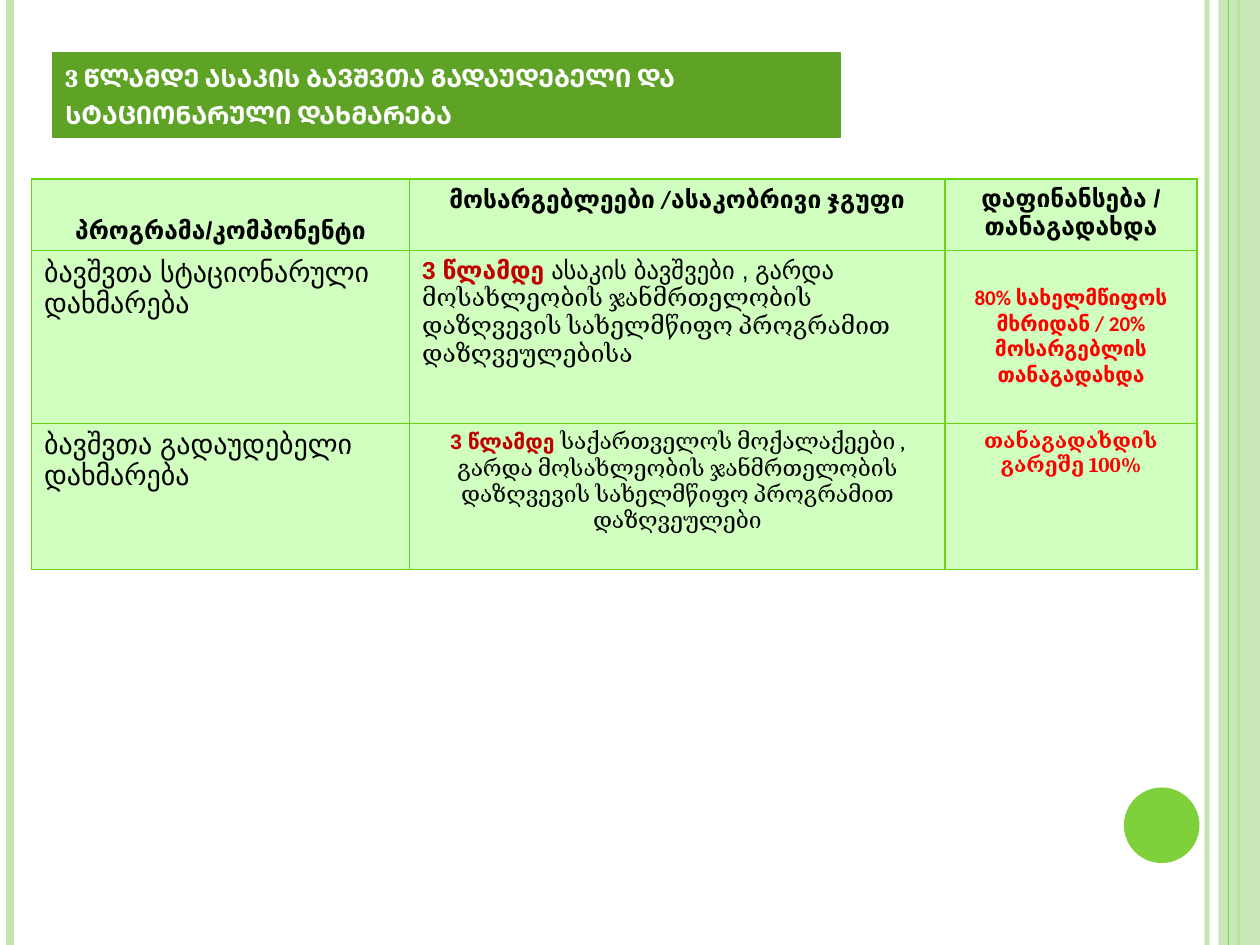
from lxml import etree
from pptx import Presentation
from pptx.dml.color import RGBColor
from pptx.enum import shapes, text
from pptx.oxml.ns import qn
from pptx.util import Inches, Pt

PALE, GREEN, TITLE_GREEN = "C0E5AF", "7FD13B", "5FA326"
CELL_FILL, BORDER = "D0FFC0", "6AD312"
BLACK, RED, DARK_RED = "000000", "FF0000", "C00000"
LEFT, CENTER = text.PP_ALIGN.LEFT, text.PP_ALIGN.CENTER
TOP, MIDDLE, BOTTOM = (text.MSO_ANCHOR.TOP, text.MSO_ANCHOR.MIDDLE,
                       text.MSO_ANCHOR.BOTTOM)


def rgb(color):
    return RGBColor.from_string(color)


def set_alpha(sp, percent):
    """Make the first solid colour of a shape or line translucent."""
    clr = next(sp._element.spPr.iter(qn("a:srgbClr")))
    etree.SubElement(clr, qn("a:alpha")).set("val", str(percent * 1000))


def add_vertical_line(slide, x, color, width, alpha=None):
    line = slide.shapes.add_connector(shapes.MSO_CONNECTOR.STRAIGHT,
                                      Inches(x), 0, Inches(x), Inches(7.5))
    line.line.color.rgb = rgb(color)
    line.line.width = Pt(width)
    etree.SubElement(line._element.spPr, qn("a:effectLst"))
    if alpha:
        set_alpha(line, alpha)


def add_shape(slide, kind, box, fill, alpha=None):
    sp = slide.shapes.add_shape(kind, *map(Inches, box))
    sp.shadow.inherit = False
    sp.fill.solid()
    sp.fill.fore_color.rgb = rgb(fill)
    sp.line.fill.background()
    if alpha:
        set_alpha(sp, alpha)
    return sp


def add_run(p, words, size=14, font="Arial", color=BLACK, bold=False,
            small_caps=False):
    r = p.add_run()
    r.text = words
    r.font.size = Pt(size)
    r.font.name = font
    r.font.bold = bold
    r.font.color.rgb = rgb(color)
    if small_caps:
        r.font._element.set("cap", "small")


def add_title(slide, words):
    sp = add_shape(slide, shapes.MSO_SHAPE.RECTANGLE,
                   (0.42, 0.42, 6.25, 0.67), TITLE_GREEN)
    sp.line.color.rgb = rgb(TITLE_GREEN)
    sp.line.width = Pt(0.75)
    tf = sp.text_frame
    tf.word_wrap = True
    tf.vertical_anchor = BOTTOM
    tf.paragraphs[0].alignment = LEFT
    add_run(tf.paragraphs[0], words, size=18, font="Cambria", color="FFFFFF",
            bold=True, small_caps=True)


def set_borders(cell, color, width):
    tcPr = cell._tc.get_or_add_tcPr()
    for i, side in enumerate(("lnL", "lnR", "lnT", "lnB")):
        ln = etree.Element(qn(f"a:{side}"), w=str(Pt(width)))
        fill = etree.SubElement(ln, qn("a:solidFill"))
        etree.SubElement(fill, qn("a:srgbClr")).set("val", color)
        tcPr.insert(i, ln)


def fill_cell(cell, align, anchor, runs):
    cell.fill.solid()
    cell.fill.fore_color.rgb = rgb(CELL_FILL)
    set_borders(cell, BORDER, 1)
    cell.vertical_anchor = anchor
    p = cell.text_frame.paragraphs[0]
    p.alignment = align
    for words, style in runs:
        add_run(p, words, **style)


def add_table(slide, box, widths, heights, rows):
    table = slide.shapes.add_table(len(heights), len(widths),
                                   *map(Inches, box)).table
    for col, width in zip(table.columns, widths):
        col.width = Inches(width)
    for row, height, contents in zip(table.rows, heights, rows):
        row.height = Inches(height)
        for cell, content in zip(row.cells, contents):
            fill_cell(cell, *content)


def main():
    prs = Presentation()
    prs.slide_width, prs.slide_height = Inches(10), Inches(7.5)
    slide = prs.slides.add_slide(prs.slide_layouts[6])

    add_vertical_line(slide, 9.58, PALE, 3, alpha=93)
    add_vertical_line(slide, 0.08, PALE, 4.5)
    add_vertical_line(slide, 9.83, GREEN, 1.5)
    add_shape(slide, shapes.MSO_SHAPE.RECTANGLE, (9.67, 0, 0.33, 7.5), PALE,
              alpha=87)
    add_vertical_line(slide, 9.75, GREEN, 0.75)
    add_shape(slide, shapes.MSO_SHAPE.OVAL, (8.92, 6.25, 0.6, 0.6), GREEN)

    add_title(slide, "3 წლამდე ასაკის ბავშვთა გადაუდებელი და "
                     "სტაციონარული დახმარება")

    header = dict(bold=True)
    program = dict(size=16)
    rows = [
        [(CENTER, BOTTOM, [("პროგრამა/კომპონენტი", header)]),
         (CENTER, TOP, [("მოსარგებლეები /ასაკობრივი ჯგუფი",
                         dict(header, font="Calibri"))]),
         (CENTER, TOP, [("დაფინანსება / თანაგადახდა", header)])],
        [(LEFT, TOP, [("ბავშვთა სტაციონარული დახმარება", program)]),
         (LEFT, TOP, [("3 წლამდე ", dict(color=DARK_RED, bold=True)),
                      ("ასაკის ბავშვები , გარდა ", {}),
                      ("მოსახლეობის ჯანმრთელობის დაზღვევის სახელმწიფო "
                       "პროგრამით დაზღვეულებისა", dict(font="Cambria"))]),
         (CENTER, MIDDLE, [("80% სახელმწიფოს მხრიდან / 20% მოსარგებლის "
                            "თანაგადახდა",
                            dict(size=12, font="Calibri", color=RED,
                                 bold=True))])],
        [(LEFT, TOP, [("ბავშვთა გადაუდებელი დახმარება", program)]),
         (CENTER, TOP, [("3 წლამდე ",
                         dict(size=12, color=DARK_RED, bold=True)),
                        ("საქართველოს მოქალაქეები , გარდა მოსახლეობის "
                         "ჯანმრთელობის დაზღვევის სახელმწიფო პროგრამით "
                         "დაზღვეულები", dict(size=13, font="Cambria"))]),
         (CENTER, TOP, [("თანაგადახდის გარეშე 100%",
                         dict(size=12, font="Cambria", color=RED,
                              bold=True))])],
    ]
    add_table(slide, (0.25, 1.42, 9.25, 3.1), (3, 4.25, 2),
              (0.57, 1.37, 1.16), rows)
    prs.save("out.pptx")


if __name__ == "__main__":
    main()
